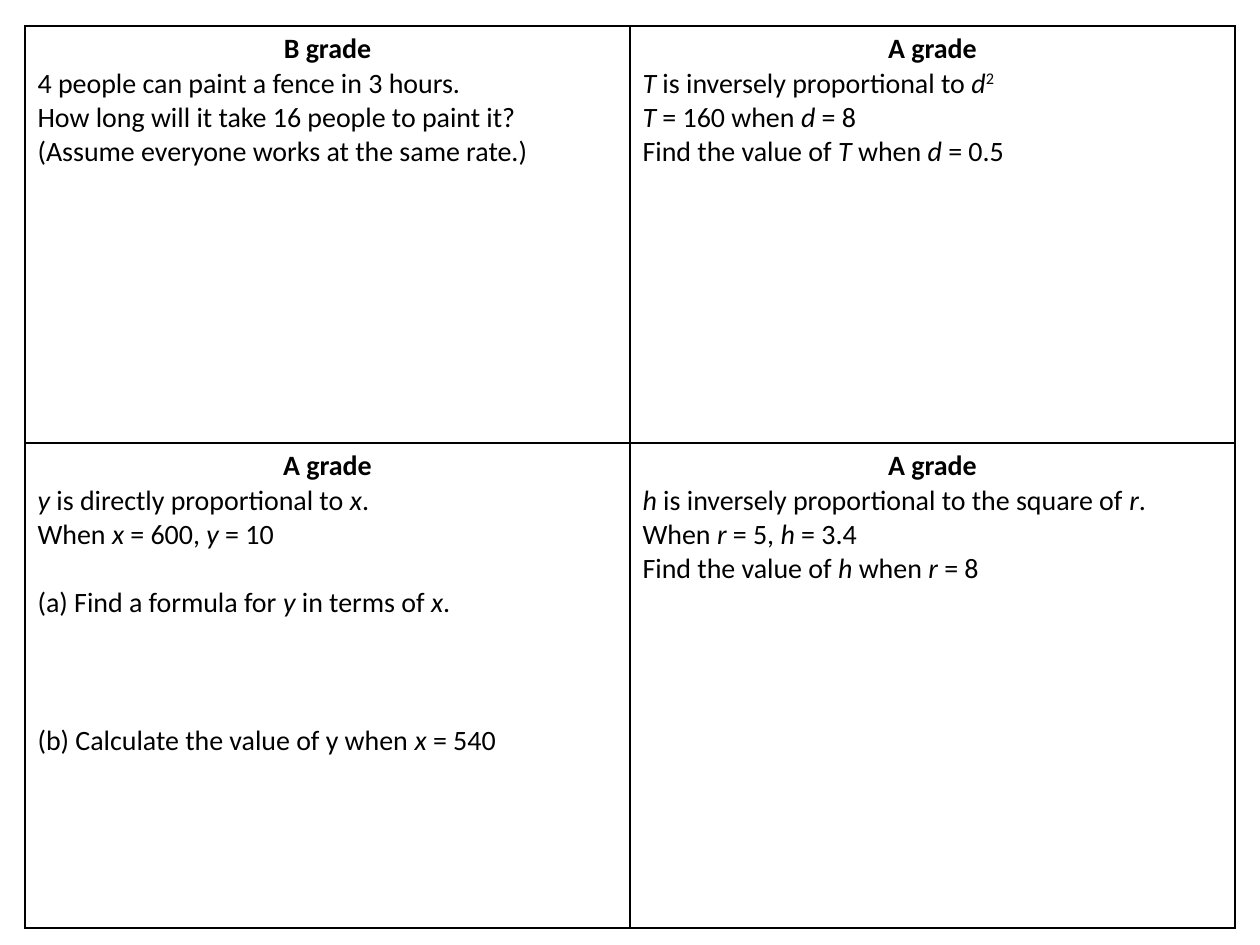
from lxml.etree import SubElement
from pptx import Presentation
from pptx.dml.color import RGBColor
from pptx.enum.text import PP_ALIGN as Align
from pptx.oxml.ns import qn
from pptx.util import Pt

EMU_PER_PX = 914400 / 126
BLACK = "000000"
LINE_PT = 19.6
COLUMN_WIDTHS = [605, 605]
ROW_HEIGHTS = [417, 485]

# Each question line is (blank lines above, text): *italic*, ^superscript.
QUESTIONS = [
    [
        ("B grade", [
            (0, "4 people can paint a fence in 3 hours."),
            (0, "How long will it take 16 people to paint it?"),
            (0, "(Assume everyone works at the same rate.)"),
        ]),
        ("A grade", [
            (0, "*T* is inversely proportional to *d*^2"),
            (0, "*T* = 160 when *d* = 8"),
            (0, "Find the value of *T* when *d* = 0.5"),
        ]),
    ],
    [
        ("A grade", [
            (0, "*y* is directly proportional to *x*."),
            (0, "When *x* = 600, *y* = 10"),
            (1, "(a) Find a formula for *y* in terms of *x*."),
            (3, "(b) Calculate the value of y when *x* = 540"),
        ]),
        ("A grade", [
            (0, "*h* is inversely proportional to the square of *r*."),
            (0, "When *r* = 5, *h* = 3.4"),
            (0, "Find the value of *h* when *r* = 8"),
        ]),
    ],
]


def px(length):
    """Turn pixels into EMU."""
    return round(length * EMU_PER_PX)


def color(value):
    """Turn a hex string into a colour."""
    return RGBColor.from_string(value)


def add_run(paragraph, text, bold=False, italic=False, raised=False):
    """Append one formatted run, skipping empty text."""
    if not text:
        return
    run = paragraph.add_run()
    run.text = text
    font = run.font
    font.name, font.size = "Calibri", Pt(16)
    font.bold, font.italic = bold, italic
    font.color.rgb = color(BLACK)
    if raised:
        font._element.set("baseline", "30000")


def add_marked_line(paragraph, marked):
    """Write a line whose variables are italic and whose powers are raised."""
    for index, part in enumerate(marked.split("*")):
        normal, _, power = part.partition("^")
        add_run(paragraph, normal, italic=index % 2 == 1)
        add_run(paragraph, power, raised=True)


def outline(cell):
    """Give a cell thin black borders and no fill."""
    properties = cell._tc.get_or_add_tcPr()
    for side in ("lnL", "lnR", "lnT", "lnB"):
        border = SubElement(properties, qn(f"a:{side}"), w=str(Pt(1)))
        fill = SubElement(border, qn("a:solidFill"))
        SubElement(fill, qn("a:srgbClr"), val=BLACK)
    cell.fill.background()


def fill_question(cell, grade, lines):
    """Write a centred grade heading and the question below it."""
    outline(cell)
    heading = cell.text_frame.paragraphs[0]
    heading.alignment = Align.CENTER
    add_run(heading, grade, bold=True)
    for gap, marked in lines:
        paragraph = cell.text_frame.add_paragraph()
        paragraph.alignment = Align.LEFT
        paragraph.space_before = Pt(gap * LINE_PT)
        add_marked_line(paragraph, marked)


def add_question_grid(slide, left, top):
    """Place the table of graded questions."""
    grid = slide.shapes.add_table(
        len(ROW_HEIGHTS), len(COLUMN_WIDTHS), px(left), px(top),
        px(sum(COLUMN_WIDTHS)), px(sum(ROW_HEIGHTS))).table
    grid.first_row = grid.horz_banding = False
    for column, width in zip(grid.columns, COLUMN_WIDTHS):
        column.width = px(width)
    for row, height, questions in zip(grid.rows, ROW_HEIGHTS, QUESTIONS):
        row.height = px(height)
        for cell, (grade, lines) in zip(row.cells, questions):
            fill_question(cell, grade, lines)


def main():
    """Build and save the worksheet."""
    deck = Presentation()
    deck.slide_width, deck.slide_height = px(1260), px(945)
    slide = deck.slides.add_slide(deck.slide_layouts[6])
    add_question_grid(slide, 25, 26)
    deck.save("out.pptx")


if __name__ == "__main__":
    main()
